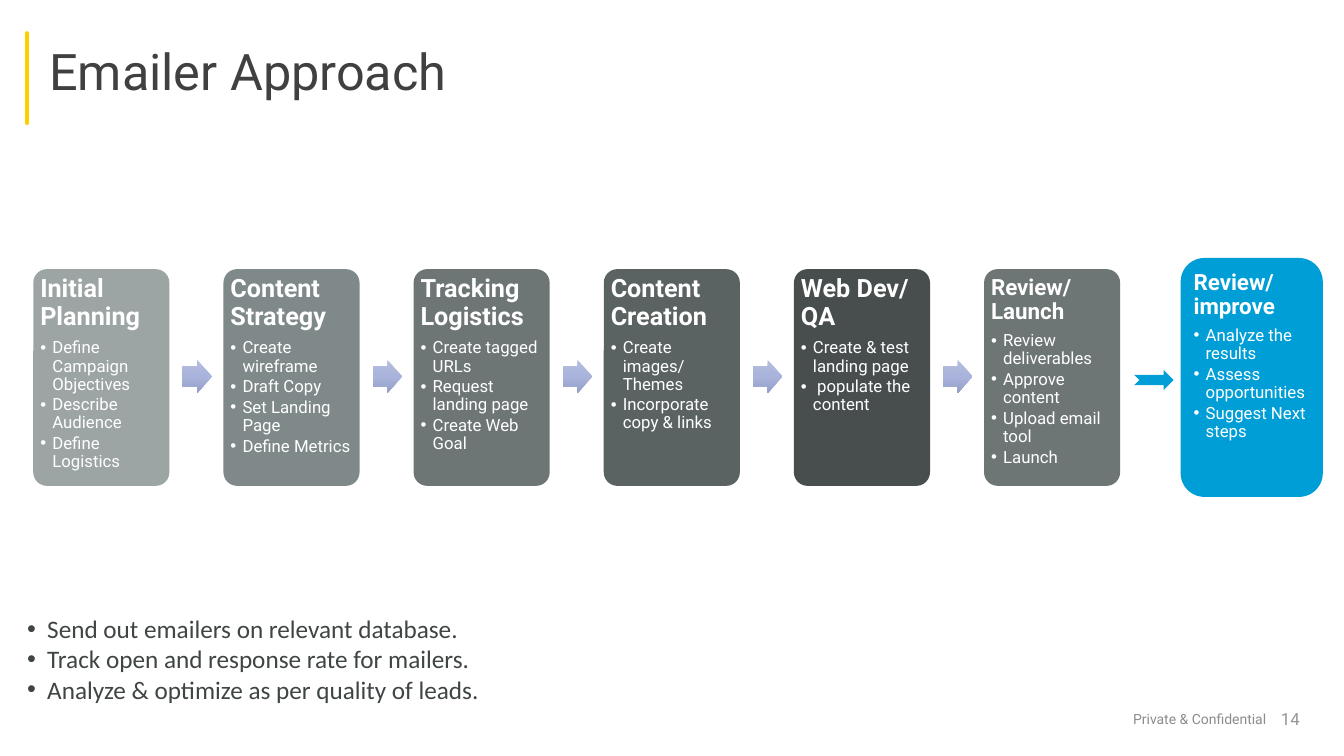
"""Build the Emailer Approach slide: seven process cards, arrows and closing bullets."""
from copy import deepcopy

from lxml.etree import SubElement
from pptx import Presentation
from pptx.dml.color import RGBColor
from pptx.enum.shapes import MSO_CONNECTOR as Connector, MSO_SHAPE as Shape
from pptx.enum.text import MSO_ANCHOR as Anchor, PP_ALIGN as Align
from pptx.oxml.ns import qn
from pptx.util import Inches, Pt

WHITE = RGBColor(0xFF, 0xFF, 0xFF)
YELLOW = RGBColor(0xFF, 0xCC, 0x00)
BLUE = RGBColor(0x00, 0x9E, 0xD6)
TITLE_GREY = RGBColor(0x40, 0x40, 0x40)
BODY_GREY = RGBColor(0x3F, 0x44, 0x44)
FOOTER_GREY = RGBColor(0x8C, 0x8C, 0x8C)
NUMBER_GREY = RGBColor(0x93, 0x94, 0x94)
CARD_GREYS = [
    RGBColor(0x9D, 0xA4, 0xA4), RGBColor(0x7F, 0x89, 0x89), RGBColor(0x6D, 0x75, 0x75),
    RGBColor(0x5A, 0x62, 0x62), RGBColor(0x48, 0x4E, 0x4E), RGBColor(0x6D, 0x75, 0x75),
]
ARROW_STOPS = [
    (0, RGBColor(0xB6, 0xBE, 0xDE)),
    (0.5, RGBColor(0xA9, 0xB3, 0xDB)),
    (1, RGBColor(0x93, 0x9E, 0xC6)),
]

STEPS = [
    ("Initial Planning", 18,
     ["Define Campaign Objectives", "Describe Audience", "Define Logistics"]),
    ("Content Strategy", 18,
     ["Create wireframe", "Draft Copy", "Set Landing Page", "Define Metrics"]),
    ("Tracking Logistics", 18,
     ["Create tagged URLs", "Request landing page", "Create Web Goal"]),
    ("Content Creation", 18, ["Create images/ Themes", "Incorporate copy & links"]),
    ("Web Dev/ QA", 18, ["Create & test landing page", " populate the content"]),
    ("Review/ Launch", 16,
     ["Review deliverables", "Approve content", "Upload email tool", "Launch"]),
    ("Review/ improve", 16,
     ["Analyze the results", "Assess opportunities", "Suggest Next steps"]),
]
CLOSING_POINTS = [
    "Send out emailers on relevant database.",
    "Track open and response rate for mailers.",
    "Analyze & optimize as per quality of leads.",
]
CARD_LEFT, CARD_TOP, CARD_WIDTH, CARD_HEIGHT = 0.33, 2.67, 1.35, 2.15
CARD_PITCH = (9.76 - CARD_LEFT) / 5


def write(frame, text, size, color, font="Roboto", bold=False, indent=0):
    """Write one paragraph, bulleted when it has an indent, and return it."""
    paragraph = frame.paragraphs[0]
    if paragraph.runs:
        paragraph = frame.add_paragraph()
    paragraph.alignment = Align.LEFT
    run = paragraph.add_run()
    run.text = text
    run.font.name = font
    run.font.size = Pt(size)
    run.font.bold = bold
    run.font.color.rgb = color
    if indent:
        properties = paragraph._p.get_or_add_pPr()
        properties.set("marL", str(Inches(indent)))
        properties.set("indent", str(-Inches(indent)))
        SubElement(properties, qn("a:buFont")).set("typeface", "Arial")
        SubElement(properties, qn("a:buChar")).set("char", "•")
    return paragraph


def add_plain(kind, left, top, width, height):
    """Add a preset shape without shadow or outline."""
    shape = slide.shapes.add_shape(
        kind, Inches(left), Inches(top), Inches(width), Inches(height))
    shape.shadow.inherit = False
    shape.line.fill.background()
    return shape


presentation = Presentation()
presentation.slide_width = Inches(13.33)
presentation.slide_height = Inches(7.5)
slide = presentation.slides.add_slide(presentation.slide_layouts[6])

accent = slide.shapes.add_connector(
    Connector.STRAIGHT, Inches(0.27), Inches(0.33), Inches(0.27), Inches(1.22))
accent.line.color.rgb = YELLOW
accent.line.width = Pt(3)
accent.line._get_or_add_ln().set("cap", "rnd")
SubElement(accent._element.spPr, qn("a:effectLst"))

frames = []
for left, top, width, height in [
    (0.39, 0.29, 9.42, 0.9), (0.17, 6.03, 8.42, 1.01),
    (11.14, 7, 1.59, 0.27), (11.8, 6.93, 1.19, 0.4),
]:
    box = slide.shapes.add_textbox(
        Inches(left), Inches(top), Inches(width), Inches(height))
    box.text_frame.word_wrap = True
    box.text_frame.vertical_anchor = Anchor.MIDDLE
    frames.append(box.text_frame)
title, closing, footer, number = frames
write(title, "Emailer Approach", 36, TITLE_GREY).line_spacing = 0.9
for point in CLOSING_POINTS:
    write(closing, point, 18, BODY_GREY, font="Calibri", indent=0.2)
write(footer, "Private & Confidential", 10, FOOTER_GREY)
write(number, "14", 12, NUMBER_GREY).alignment = Align.RIGHT

for index, (heading, heading_size, tasks) in enumerate(STEPS):
    left = CARD_LEFT + index * CARD_PITCH
    if index < len(CARD_GREYS):
        card = add_plain(Shape.ROUNDED_RECTANGLE, left, CARD_TOP, CARD_WIDTH, CARD_HEIGHT)
        card.adjustments[0] = 0.1
        color, inset = CARD_GREYS[index], 0.03
    else:
        card = add_plain(Shape.ROUNDED_RECTANGLE, 11.71, 2.56, 1.41, 2.37)
        color, inset = BLUE, 0.06
    card.fill.solid()
    card.fill.fore_color.rgb = color

    frame = card.text_frame
    frame.word_wrap = True
    frame.vertical_anchor = Anchor.TOP
    frame.margin_left = frame.margin_right = Inches(inset)
    frame.margin_top = frame.margin_bottom = Inches(inset)
    paragraph = write(frame, heading, heading_size, WHITE, bold=True)
    paragraph.line_spacing = 0.9
    paragraph.space_after = Pt(0.35 * heading_size)
    for task in tasks:
        paragraph = write(frame, task, 12, WHITE, indent=0.12)
        paragraph.line_spacing = 0.9
        paragraph.space_after = Pt(1.8)

    if index < len(CARD_GREYS) - 1:
        arrow = add_plain(Shape.RIGHT_ARROW, left + 1.48, 3.57, 0.29, 0.33)
        arrow.adjustments[0] = 0.6
        arrow.fill.gradient()
        arrow.fill.gradient_angle = 270
        stop_list = arrow._element.spPr.find(qn("a:gradFill")).find(qn("a:gsLst"))
        stop_list.append(deepcopy(stop_list[-1]))
        for stop, (position, stop_color) in zip(arrow.fill.gradient_stops, ARROW_STOPS):
            stop.position = position
            stop.color.rgb = stop_color

last_arrow = add_plain(Shape.NOTCHED_RIGHT_ARROW, 11.25, 3.67, 0.39, 0.2)
last_arrow.fill.solid()
last_arrow.fill.fore_color.rgb = BLUE

presentation.save("out.pptx")
